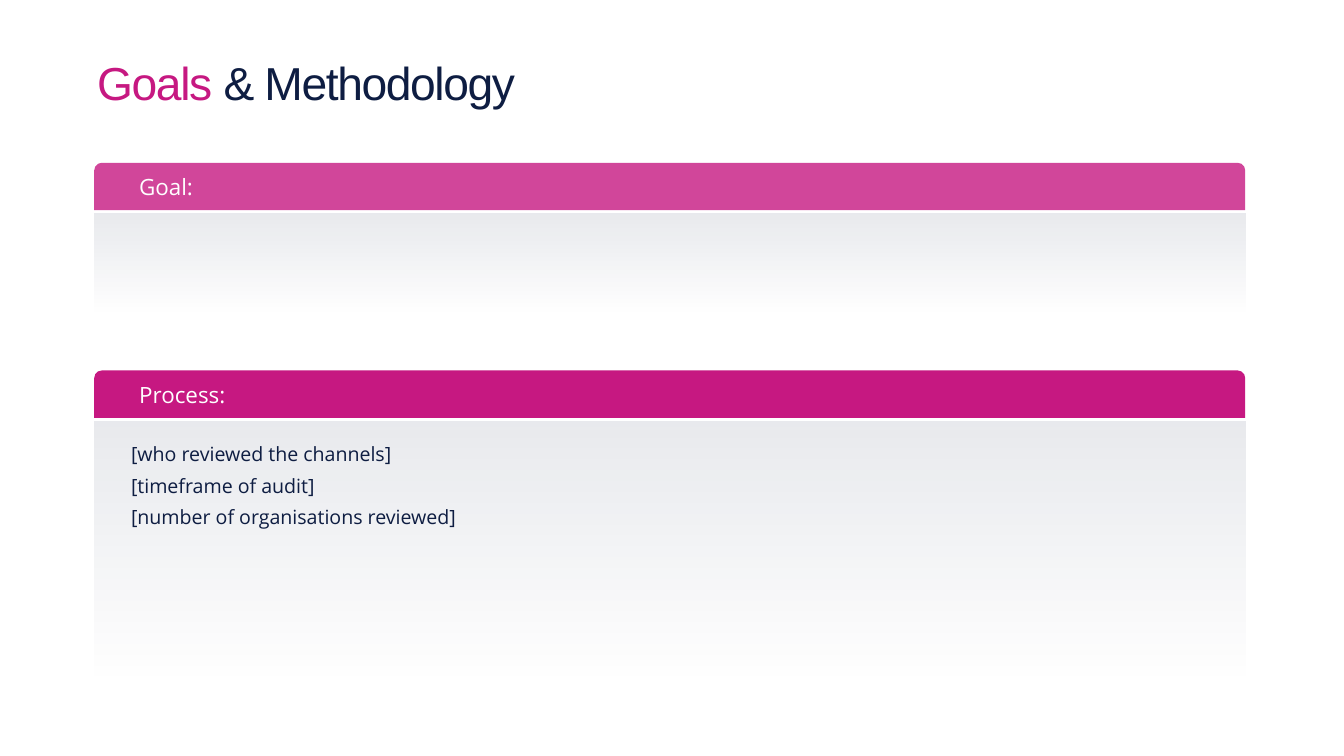
from dataclasses import dataclass

from lxml import etree
from pptx import Presentation
from pptx.dml.color import RGBColor
from pptx.enum import shapes, text
from pptx.oxml import ns
from pptx.util import Inches, Pt


@dataclass(frozen=True)
class Theme:
    pink: str = "C61881"
    navy: str = "0E1D42"
    white: str = "FFFFFF"
    head: str = "Arial"
    body: str = "Open Sans"
    title: int = 66
    label: int = 32
    note: int = 28


@dataclass(frozen=True)
class Panel:
    label: str
    top: float
    drop: float  # from header top to body top
    high: float  # body height
    alpha: int   # header opacity, percent


THEME = Theme()
LEFT, WIDE, BAR = 1.87, 22.84, 0.94
PANELS = [
    Panel("Goal:", 3.23, 1.0, 2.05, 80),
    Panel("Process:", 7.35, 1.02, 5.36, 100),
]
NOTES = [
    "[who reviewed the channels]",
    "[timeframe of audit]",
    "[number of organisations reviewed]",
]


def style(run, font: str, size: int, color: str) -> None:
    run.font.name = font
    run.font.size = Pt(size)
    run.font.color.rgb = RGBColor.from_string(color)


def add_box(slide, x: float, y: float, w: float, h: float, pad: float):
    box = slide.shapes.add_textbox(Inches(x), Inches(y), Inches(w), Inches(h))
    frame = box.text_frame
    frame.word_wrap = True
    frame.margin_left = frame.margin_right = Inches(pad)
    frame.margin_top = frame.margin_bottom = Inches(pad)
    return frame


def add_block(slide, kind, y: float, h: float):
    block = slide.shapes.add_shape(
        kind, Inches(LEFT), Inches(y), Inches(WIDE), Inches(h))
    block.shadow.inherit = False
    block.line.fill.background()
    return block


def set_alpha(color, percent: int) -> None:
    etree.SubElement(color, ns.qn("a:alpha"), val=str(percent * 1000))


def add_panel(slide, panel: Panel) -> None:
    # Body fading out downwards
    body = add_block(slide, shapes.MSO_SHAPE.RECTANGLE,
                     panel.top + panel.drop, panel.high)
    body.fill.gradient()
    body.fill.gradient_angle = 270
    for stop, alpha in zip(body.fill.gradient_stops, (10, 0)):
        stop.color.rgb = RGBColor.from_string(THEME.navy)
    colors = body.fill._xPr.iter(ns.qn("a:srgbClr"))
    for color, alpha in zip(list(colors), (10, 0)):
        set_alpha(color, alpha)

    # Header bar with rounded top corners
    bar = add_block(slide, shapes.MSO_SHAPE.ROUND_2_SAME_RECTANGLE,
                    panel.top, BAR)
    bar.adjustments[0] = 0.16
    bar.fill.solid()
    bar.fill.fore_color.rgb = RGBColor.from_string(THEME.pink)
    if panel.alpha < 100:
        set_alpha(bar.element.spPr.find(".//" + ns.qn("a:srgbClr")), panel.alpha)

    # Header label
    frame = add_box(slide, 2.7, panel.top + 0.16, 5.9, 0.64, 0.06)
    frame.vertical_anchor = text.MSO_ANCHOR.MIDDLE
    frame.text = panel.label
    style(frame.paragraphs[0].runs[0], THEME.body, THEME.label, THEME.white)


def add_title(slide) -> None:
    para = add_box(slide, LEFT, 1.24, 13.03, 1.26, 0.06).paragraphs[0]
    para.line_spacing = 0.8
    for words, color in (("Goals ", THEME.pink), ("& Methodology", THEME.navy)):
        run = para.add_run()
        run.text = words
        style(run, THEME.head, THEME.title, color)
        run.font._element.set("spc", "-200")


def add_notes(slide) -> None:
    frame = add_box(slide, 2.6, 8.76, 8.65, 1.75, 0)
    frame.auto_size = text.MSO_AUTO_SIZE.SHAPE_TO_FIT_TEXT
    frame.text = "\n".join(NOTES)
    for para in frame.paragraphs:
        para.space_before = Pt(12)
        style(para.runs[0], THEME.body, THEME.note, THEME.navy)


def main() -> None:
    deck = Presentation()
    deck.slide_width, deck.slide_height = Inches(26.67), Inches(15)
    slide = deck.slides.add_slide(deck.slide_layouts[6])
    add_title(slide)
    for panel in PANELS:
        add_panel(slide, panel)
    add_notes(slide)
    deck.save("out.pptx")


if __name__ == "__main__":
    main()
